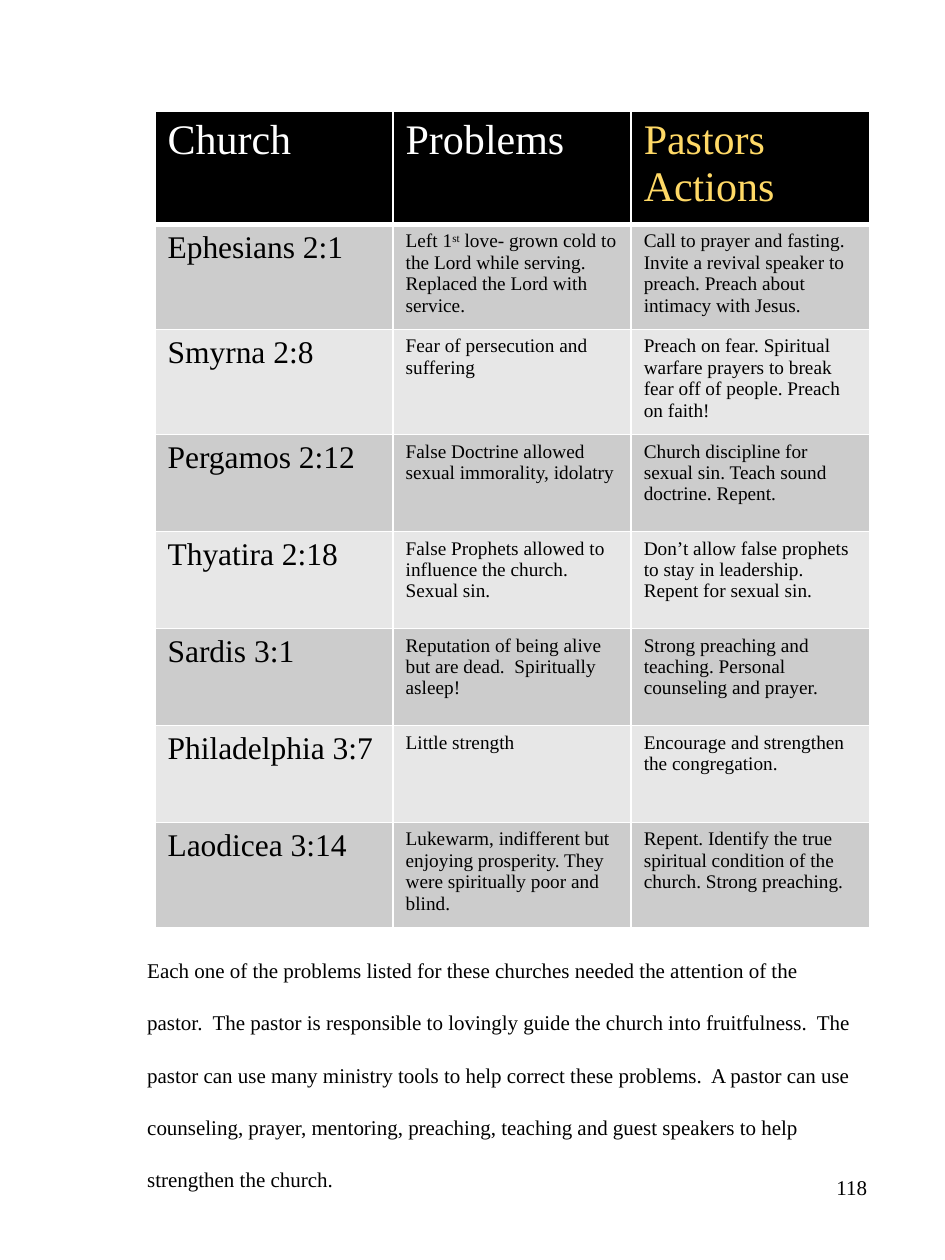
from lxml.etree import SubElement
from pptx import Presentation
from pptx.dml.color import RGBColor
from pptx.oxml.ns import qn
from pptx.util import Inches, Pt

COLORS = {"ink": "000000", "paper": "FFFFFF", "gold": "FFD966", "dark_band": "CCCCCC", "light_band": "E7E7E7"}
HEADINGS = [("Church", "paper"), ("Problems", "paper"), ("Pastors Actions", "gold")]
CHURCHES = [
    ("Ephesians 2:1",
     "Left 1^st^ love- grown cold to the Lord while serving. Replaced the Lord with service.",
     "Call to prayer and fasting.\nInvite a revival speaker to preach. Preach about intimacy with Jesus."),
    ("Smyrna 2:8",
     "Fear of persecution and suffering",
     "Preach on fear. Spiritual warfare prayers to break fear off of people. Preach on faith!"),
    ("Pergamos 2:12",
     "False Doctrine allowed\nsexual immorality, idolatry",
     "Church discipline for sexual sin. Teach sound doctrine. Repent."),
    ("Thyatira 2:18",
     "False Prophets allowed to influence the church. Sexual sin.",
     "Don’t allow false prophets to stay in leadership. Repent for sexual sin."),
    ("Sardis 3:1",
     "Reputation of being alive but are dead.  Spiritually\nasleep!",
     "Strong preaching and teaching. Personal counseling and prayer."),
    ("Philadelphia 3:7",
     "Little strength",
     "Encourage and strengthen the congregation."),
    ("Laodicea 3:14",
     "Lukewarm, indifferent but enjoying prosperity. They were spiritually poor and blind.",
     "Repent. Identify the true spiritual condition of the church. Strong preaching."),
]
ROW_HEIGHTS = [0.89, 0.83, 0.83, 0.77, 0.77, 0.77, 0.77, 0.83]
SUMMARY = """Each one of the problems listed for these churches needed the attention of the
pastor.  The pastor is responsible to lovingly guide the church into fruitfulness.  The
pastor can use many ministry tools to help correct these problems.  A pastor can use
counseling, prayer, mentoring, preaching, teaching and guest speakers to help
strengthen the church."""


class HandbookPage:
    """Holds the page style and the slide being filled."""

    def __init__(self, slide, face="Times New Roman"):
        self.slide = slide
        self.face = face

    def fill_text(self, frame, text, size, color="ink", gap=0):
        for index, line in enumerate(text.split("\n")):
            paragraph = frame.add_paragraph() if index else frame.paragraphs[0]
            if index and gap:
                paragraph.space_before = Pt(gap)
            for part, words in enumerate(line.split("^")):
                run = paragraph.add_run()
                run.text = words
                style = {"name": self.face, "size": Pt(size), "bold": False}
                for key, value in style.items():
                    setattr(run.font, key, value)
                run.font.color.rgb = RGBColor.from_string(COLORS[color])
                if part % 2:
                    run._r.get_or_add_rPr().set("baseline", "30000")

    def text(self, left, top, width, height, words, wrap=True, gap=0):
        box = self.slide.shapes.add_textbox(Inches(left), Inches(top), Inches(width), Inches(height))
        box.text_frame.word_wrap = wrap
        self.fill_text(box.text_frame, words, 12, gap=gap)

    def cell(self, cell, words, size, fill, color="ink", bottom=1, top=1):
        properties = cell._tc.get_or_add_tcPr()
        for side, width in {"lnL": 1, "lnR": 1, "lnT": top, "lnB": bottom}.items():
            border = SubElement(properties, qn(f"a:{side}"), w=str(Pt(width)))
            paint = SubElement(border, qn("a:solidFill"))
            SubElement(paint, qn("a:srgbClr"), val=COLORS["paper"])
        cell.fill.solid()
        cell.fill.fore_color.rgb = RGBColor.from_string(COLORS[fill])
        self.fill_text(cell.text_frame, words, size, color)

    def church_table(self, left, top, column_width):
        frame = self.slide.shapes.add_table(
            len(ROW_HEIGHTS), len(HEADINGS), Inches(left), Inches(top),
            Inches(column_width * len(HEADINGS)), Inches(sum(ROW_HEIGHTS)))
        table = frame.table
        for column in table.columns:
            column.width = Inches(column_width)
        for row, height in zip(table.rows, ROW_HEIGHTS):
            row.height = Inches(height)
        for column, (heading, color) in enumerate(HEADINGS):
            self.cell(table.cell(0, column), heading, 24, "ink", color, bottom=3)
        for row, church in enumerate(CHURCHES, 1):
            band = "dark_band" if row % 2 else "light_band"
            for column, words in enumerate(church):
                self.cell(table.cell(row, column), words, 11 if column else 18, band,
                          top=3 if row == 1 else 1)


def main():
    deck = Presentation()
    deck.slide_width, deck.slide_height = Inches(7.5), Inches(10)
    page = HandbookPage(deck.slides.add_slide(deck.slide_layouts[6]))
    page.text(1.07, 7.55, 6.18, 1.95, SUMMARY, gap=15.5)
    page.text(6.54, 9.27, 0.45, 0.3, "118", wrap=False)
    page.church_table(1.23, 0.88, 1.89)
    deck.save("out.pptx")


if __name__ == "__main__":
    main()
